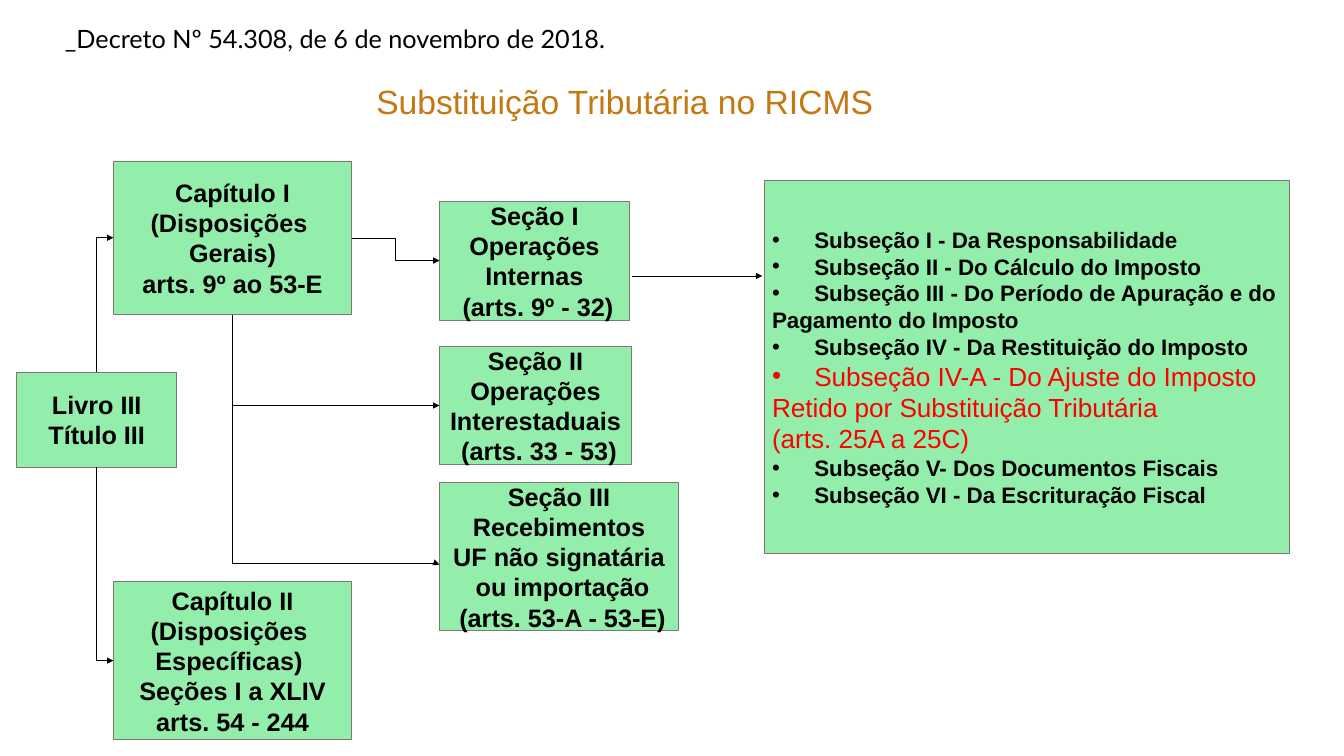
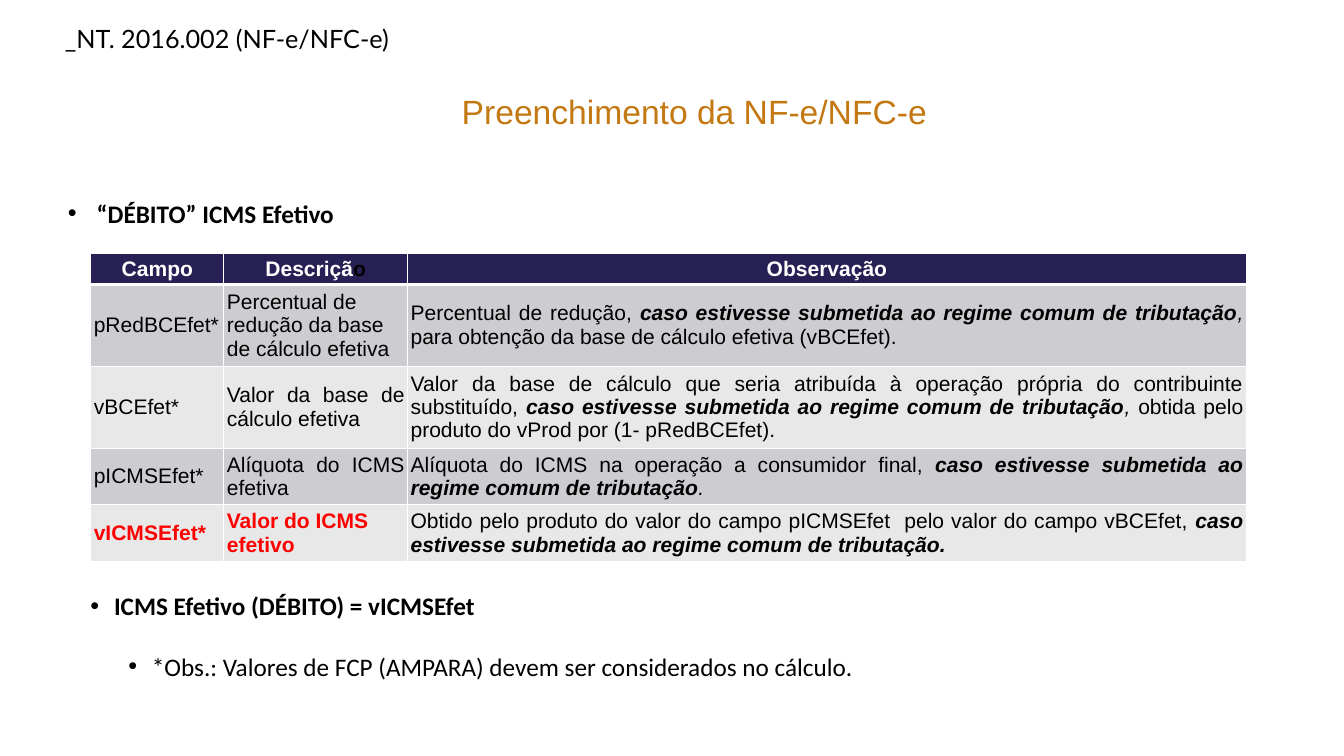
import lxml.etree
import pptx
import pptx.dml.color
import pptx.enum.shapes
import pptx.enum.text
import pptx.oxml.ns
import pptx.util

Cm, Pt = pptx.util.Cm, pptx.util.Pt
ALIGN = pptx.enum.text.PP_ALIGN
MIDDLE = pptx.enum.text.MSO_ANCHOR.MIDDLE
LINK = pptx.enum.shapes.MSO_CONNECTOR
TOP, LEFT, BOTTOM, RIGHT = range(4)

HUES = {
    "ink": "000000", "title": "C37811", "box": "93EDAB", "edge": "7F7870",
    "alert": "FF0000", "white": "FFFFFF", "head": "272054",
    "dark": "CDCDD1", "light": "E8E8E9",
}

COLUMN = 14.76
CHAPTER = 3.81
REGIME = "caso estivesse submetida ao regime comum de tributação"

# text, bullet, red
PARTS = [
    ("Subseção I - Da Responsabilidade", True, False),
    ("Subseção II - Do Cálculo do Imposto", True, False),
    ("Subseção III - Do Período de Apuração e do", True, False),
    ("Pagamento do Imposto", False, False),
    ("Subseção IV - Da Restituição do Imposto", True, False),
    ("Subseção IV-A - Do Ajuste do Imposto", True, True),
    ("Retido por Substituição Tributária", False, True),
    ("(arts. 25A a 25C)", False, True),
    ("Subseção V- Dos Documentos Fiscais", True, False),
    ("Subseção VI - Da Escrituração Fiscal", True, False),
]

# field, description, description alignment, note runs (text, bold, italic)
FIELDS = [
    ("pRedBCEfet*", "Percentual de redução da base de cálculo efetiva", ALIGN.LEFT,
     [("Percentual de redução, ", False, False), (REGIME, True, True),
      (", ", False, True),
      ("para obtenção da base de cálculo efetiva (vBCEfet).", False, False)]),
    ("vBCEfet*", "Valor da base de cálculo efetiva", ALIGN.JUSTIFY,
     [("Valor da base de cálculo que seria atribuída à operação própria do "
       "contribuinte substituído, ", False, False), (REGIME, True, True),
      (",", False, True),
      (" obtida pelo produto do vProd por (1- pRedBCEfet).", False, False)]),
    ("pICMSEfet*", "Alíquota do ICMS efetiva", ALIGN.JUSTIFY,
     [("Alíquota do ICMS na operação a consumidor final, ", False, False),
      (REGIME, True, True), (".", False, True)]),
    ("vICMSEfet*", "Valor do ICMS efetivo", ALIGN.LEFT,
     [("Obtido pelo produto do valor do campo pICMSEfet  pelo valor do campo "
       "vBCEfet, ", False, False), (REGIME + ".", True, True)]),
]


def color(name):
    return pptx.dml.color.RGBColor.from_string(HUES[name])


def node(parent, tag, **attrs):
    return lxml.etree.SubElement(parent, pptx.oxml.ns.qn(tag), attrs)


def write(par, text, size, hue="ink", font="Arial", bold=False, italic=False):
    run = par.add_run()
    run.text = text
    run.font.size = Pt(size)
    run.font.name = font
    run.font.bold = bold
    run.font.italic = italic
    run.font.color.rgb = color(hue)


def next_par(frame):
    """Return the unused first paragraph, or a new one."""
    first = frame.paragraphs[0]
    return frame.add_paragraph() if first.runs else first


def bullet(par, margin, hang):
    props = par._p.get_or_add_pPr()
    props.set("marL", str(Cm(margin)))
    props.set("indent", str(-Cm(hang)))
    node(props, "a:buFont", typeface="Arial")
    node(props, "a:buChar", char="•")


def text_box(slide, left, top, width, height):
    frame = slide.shapes.add_textbox(
        Cm(left), Cm(top), Cm(width), Cm(height)).text_frame
    frame.word_wrap = True
    return frame


def heading(slide, text):
    frame = text_box(slide, 1.93, 0.66, 36.47, 1.42)
    write(frame.paragraphs[0], text, 24, font="Lato")


def title(slide, text, left, top, width):
    par = text_box(slide, left, top, width, 1.63).paragraphs[0]
    par.alignment = ALIGN.CENTER
    write(par, text, 32, "title")


def box(slide, left, top, width, height, lines=()):
    shape = slide.shapes.add_shape(
        pptx.enum.shapes.MSO_SHAPE.RECTANGLE,
        Cm(left), Cm(top), Cm(width), Cm(height))
    shape.shadow.inherit = False
    shape.fill.solid()
    shape.fill.fore_color.rgb = color("box")
    shape.line.color.rgb = color("edge")
    shape.line.width = Pt(0.75)
    frame = shape.text_frame
    frame.vertical_anchor = MIDDLE
    frame.word_wrap = not lines
    for line in lines:
        par = next_par(frame)
        par.alignment = ALIGN.CENTER
        write(par, line, 24, bold=True)
    return shape


def arrow(slide, kind, x1=0, y1=0, x2=0, y2=0):
    link = slide.shapes.add_connector(kind, Cm(x1), Cm(y1), Cm(x2), Cm(y2))
    link.line.color.rgb = color("ink")
    link.line.width = Pt(0.5)
    node(link.line._get_or_add_ln(), "a:tailEnd", type="triangle")
    node(link._element.spPr, "a:effectLst")
    return link


def join(slide, start, side, end):
    """Lead an elbow arrow from a side of one box to the left of another."""
    link = arrow(slide, LINK.ELBOW)
    link.begin_connect(start, side)
    link.end_connect(end, LEFT)
    return link


def turn(link, bend=None):
    """Make an elbow leave vertically; bend is where it turns, in 1/100000."""
    x1, y1, x2, y2 = link.begin_x, link.begin_y, link.end_x, link.end_y
    wide, tall = x2 - x1, abs(y2 - y1)
    link.left, link.top = (x1 + x2 - tall) // 2, (y1 + y2 - wide) // 2
    link.width, link.height = tall, wide
    rises = y2 < y1
    props = link._element.spPr
    frame = props.find(pptx.oxml.ns.qn("a:xfrm"))
    frame.set("rot", "5400000" if rises else "16200000")
    frame.set("flipH", "1")
    frame.set("flipV", "1" if rises else "0")
    shape = props.find(pptx.oxml.ns.qn("a:prstGeom"))
    if bend is None:
        shape.set("prst", "bentConnector2")
    else:
        guides = shape.find(pptx.oxml.ns.qn("a:avLst"))
        if guides is None:
            guides = node(shape, "a:avLst")
        node(guides, "a:gd", name="adj1", fmla=f"val {bend}")


def borders(cell, base):
    props = cell._tc.get_or_add_tcPr()
    for side, width in (("L", 1), ("R", 1), ("T", 1), ("B", base)):
        line = node(props, f"a:ln{side}", w=str(Pt(width)))
        node(node(line, "a:solidFill"), "a:srgbClr", val=HUES["white"])


def fill_cell(cell, runs, align, back, base=1):
    """Fill a cell with runs of (text, hue, bold, italic)."""
    borders(cell, base)
    cell.fill.solid()
    cell.fill.fore_color.rgb = color(back)
    cell.vertical_anchor = MIDDLE
    cell.margin_left = cell.margin_right = Cm(0.1)
    cell.margin_top = cell.margin_bottom = Cm(0.1)
    par = cell.text_frame.paragraphs[0]
    par.alignment = align
    for text, hue, bold, italic in runs:
        write(par, text, 20, hue, bold=bold, italic=italic)


def field_table(slide):
    widths, heights = (4.47, 6.17, 28.17), (1.04, 2.73, 2.76, 1.9, 1.9)
    table = slide.shapes.add_table(
        len(heights), len(widths), Cm(3.05), Cm(8.51),
        Cm(sum(widths)), Cm(sum(heights))).table
    for column, width in zip(table.columns, widths):
        column.width = Cm(width)
    for row, height in zip(table.rows, heights):
        row.height = Cm(height)
    heads = [[("Campo", "white")], [("Descriçã", "white"), ("o", "ink")],
             [("Observação", "white")]]
    for col, head in enumerate(heads):
        runs = [(text, hue, True, False) for text, hue in head]
        fill_cell(table.cell(0, col), runs, ALIGN.CENTER, "head", 3)
    for row, (field, about, align, note) in enumerate(FIELDS, 1):
        back = "dark" if row % 2 else "light"
        last = row == len(FIELDS)
        hue = "alert" if last else "ink"
        fill_cell(table.cell(row, 0), [(field, hue, last, False)], ALIGN.LEFT, back)
        fill_cell(table.cell(row, 1), [(about, hue, last, False)], align, back)
        runs = [(text, "ink", bold, italic) for text, bold, italic in note]
        fill_cell(table.cell(row, 2), runs, ALIGN.JUSTIFY, back)


def part_list(slide):
    frame = box(slide, 25.68, 6.05, 17.63, 12.55).text_frame
    for text, marked, red in PARTS:
        par = next_par(frame)
        par.alignment = ALIGN.LEFT
        if marked:
            bullet(par, 1.42, 1.42)
        if red:
            write(par, text, 24.9, "alert")
        else:
            write(par, text, 21.3, bold=True)


def decree(slide):
    book = box(slide, 0.56, 12.5, 5.38, 3.2, ["Livro III", "Título III"])
    first = box(slide, COLUMN, 6.76, 6.38, 3.99,
                ["Seção I", "Operações", "Internas", " (arts. 9º - 32)"])
    second = box(slide, COLUMN, 11.63, 6.45, 3.99,
                 ["Seção II", "Operações", "Interestaduais", " (arts. 33 - 53)"])
    special = box(slide, CHAPTER, 19.53, 8, 5.33,
                  ["Capítulo II", "(Disposições ", "Específicas) ",
                   "Seções I a XLIV", "arts. 54 - 244"])
    general = box(slide, CHAPTER, 5.41, 8, 5.16,
                  ["Capítulo I", "(Disposições ", "Gerais)", " arts. 9º ao 53-E "])
    box(slide, COLUMN, 16.21, 8.03, 4.98,
        ["Seção III", "Recebimentos", "UF não signatária",
         " ou importação", " (arts. 53-A - 53-E)"])
    turn(join(slide, book, TOP, general))
    turn(join(slide, book, BOTTOM, special))
    part_list(slide)
    arrow(slide, LINK.STRAIGHT, 21.21, 9.27, 25.6, 9.27)
    join(slide, general, RIGHT, first)
    turn(arrow(slide, LINK.ELBOW, 7.81, 10.72, COLUMN, 18.97), 99300)
    turn(join(slide, general, BOTTOM, second))
    heading(slide, "_Decreto Nº 54.308, de 6 de novembro de 2018.")
    title(slide, "Substituição Tributária no RICMS ", 9.35, 2.59, 23.6)


def invoice(slide):
    heading(slide, "_NT. 2016.002 (NF-e/NFC-e)")
    title(slide, "Preenchimento da NF-e/NFC-e", 1.93, 2.92, 42.8)
    par = text_box(slide, 2.03, 6.53, 40.97, 1.27).paragraphs[0]
    bullet(par, 0.97, 0.97)
    write(par, "“DÉBITO” ICMS Efetivo", 24, font="Calibri", bold=True)
    field_table(slide)
    frame = text_box(slide, 2.79, 19.71, 30.99, 3.33)
    par = next_par(frame)
    bullet(par, 0.79, 0.79)
    write(par, "ICMS Efetivo (DÉBITO) = vICMSEfet", 24, font="Calibri", bold=True)
    par = next_par(frame)
    par.level = 1
    bullet(par, 2.06, 0.79)
    par.space_before = Pt(29)
    write(par, "*Obs.: Valores de FCP (AMPARA) devem ser considerados no cálculo.",
          24, font="Calibri")


def main():
    deck = pptx.Presentation()
    deck.slide_width, deck.slide_height = Cm(45.14), Cm(25.4)
    for build in (decree, invoice):
        build(deck.slides.add_slide(deck.slide_layouts[6]))
    deck.save("out.pptx")


if __name__ == "__main__":
    main()
